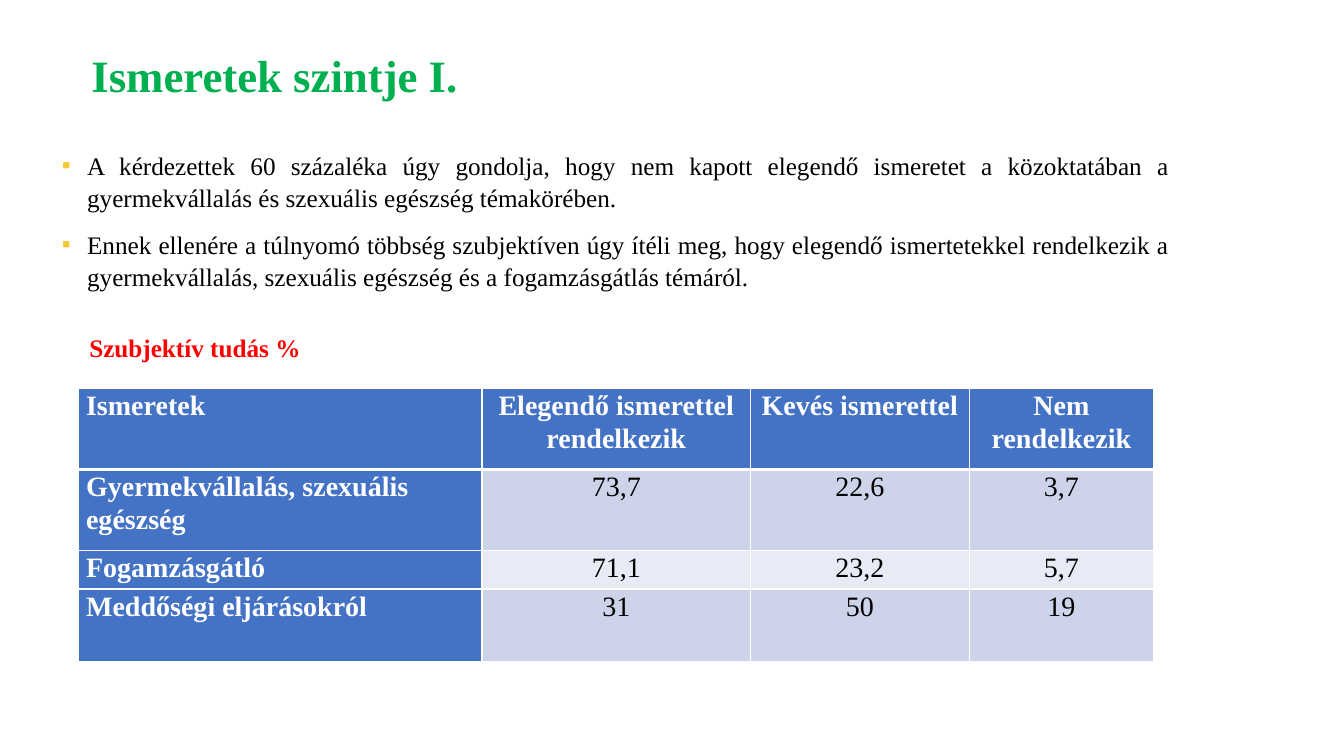
from lxml.etree import SubElement
from pptx import Presentation
from pptx.dml.color import RGBColor
from pptx.enum.text import MSO_ANCHOR, PP_ALIGN
from pptx.oxml.ns import qn
from pptx.util import Pt

PX = 9525  # 96 px to the inch
FONT = "Times New Roman"
GREEN = RGBColor(0x00, 0xB0, 0x50)
RED = RGBColor(0xFF, 0x00, 0x00)
BLACK = RGBColor(0x00, 0x00, 0x00)
WHITE = RGBColor(0xFF, 0xFF, 0xFF)
BLUE = RGBColor(0x44, 0x72, 0xC4)
BAND_DARK = RGBColor(0xCD, 0xD4, 0xEA)
BAND_LIGHT = RGBColor(0xE8, 0xEB, 0xF5)
BULLET = RGBColor(0xF5, 0xC8, 0x32)


def write(p, text, size, color, bold=False, align=PP_ALIGN.LEFT,
          spacing=None, before=None, after=None):
    p.alignment = align
    p.line_spacing = spacing
    p.space_before = before
    p.space_after = after
    r = p.add_run()
    r.text = text
    r.font.name = FONT
    r.font.size = Pt(size)
    r.font.bold = bold
    r.font.color.rgb = color


def add_box(x, y, w, h, inset_x=10, inset_y=5, wrap=True):
    tf = s.shapes.add_textbox(x * PX, y * PX, w * PX, h * PX).text_frame
    tf.word_wrap = wrap
    tf.margin_left = tf.margin_right = inset_x * PX
    tf.margin_top = tf.margin_bottom = inset_y * PX
    return tf


prs = Presentation()
prs.slide_width = 1280 * PX
prs.slide_height = 720 * PX
s = prs.slides.add_slide(prs.slide_layouts[6])

# Title
tf = add_box(87, 45, 1075, 106, inset_x=0, inset_y=0)
write(tf.paragraphs[0], "Ismeretek szintje I.", 32, GREEN, bold=True)

# Bulleted findings
findings = [
    "A kérdezettek 60 százaléka úgy gondolja, hogy nem kapott elegendő ismeretet "
    "a közoktatában a gyermekvállalás és szexuális egészség témakörében.",
    "Ennek ellenére a túlnyomó többség szubjektíven úgy ítéli meg, hogy elegendő "
    "ismertetekkel rendelkezik a gyermekvállalás, szexuális egészség és a "
    "fogamzásgátlás témáról.",
]
tf = add_box(49, 136, 1075, 516)
for i, finding in enumerate(findings):
    p = tf.add_paragraph() if i else tf.paragraphs[0]
    write(p, finding, 18, BLACK, align=PP_ALIGN.JUSTIFY, spacing=1.07,
          before=Pt(10) if i else None)
    pPr = p._p.get_or_add_pPr()
    pPr.set("marL", str(24 * PX))
    pPr.set("indent", str(-24 * PX))
    clr = SubElement(pPr, qn("a:buClr"))
    SubElement(clr, qn("a:srgbClr"), val=str(BULLET))
    SubElement(pPr, qn("a:buFont"), typeface="Arial")
    SubElement(pPr, qn("a:buChar"), char="▪")

# Knowledge table
rows = [
    ["Ismeretek", "Elegendő ismerettel rendelkezik", "Kevés ismerettel",
     "Nem rendelkezik"],
    ["Gyermekvállalás, szexuális egészség", "73,7", "22,6", "3,7"],
    ["Fogamzásgátló", "71,1", "23,2", "5,7"],
    ["Meddőségi eljárásokról", "31", "50", "19"],
]
col_widths = [384, 256, 208, 176]
row_heights = [77, 77, 37, 69]
table = s.shapes.add_table(len(rows), len(col_widths), 75 * PX, 370 * PX,
                           sum(col_widths) * PX, sum(row_heights) * PX).table
for col, width in zip(table.columns, col_widths):
    col.width = width * PX
for row, height in zip(table.rows, row_heights):
    row.height = height * PX

for i, row in enumerate(rows):
    for j, text in enumerate(row):
        cell = table.cell(i, j)
        heading = i == 0 or j == 0
        cell.margin_left = cell.margin_right = 7 * PX
        cell.margin_top = cell.margin_bottom = 0
        write(cell.text_frame.paragraphs[0], text, 20,
              WHITE if heading else BLACK, bold=heading,
              align=PP_ALIGN.CENTER if j else PP_ALIGN.LEFT,
              spacing=1.07, after=Pt(8))
        # White borders, thicker between the header and the first row
        tcPr = cell._tc.get_or_add_tcPr()
        for side in ("L", "R", "T", "B"):
            thick = (i, side) in ((0, "B"), (1, "T"))
            ln = SubElement(tcPr, qn(f"a:ln{side}"), w=str(Pt(3 if thick else 1)))
            fill = SubElement(ln, qn("a:solidFill"))
            SubElement(fill, qn("a:srgbClr"), val=str(WHITE))
        cell.fill.solid()
        band = BAND_DARK if i % 2 else BAND_LIGHT
        cell.fill.fore_color.rgb = BLUE if heading else band

# Table caption
tf = add_box(75, 312, 228, 38, wrap=False)
tf.vertical_anchor = MSO_ANCHOR.MIDDLE
write(tf.paragraphs[0], "Szubjektív tudás %", 18, RED, bold=True)

prs.save("out.pptx")
